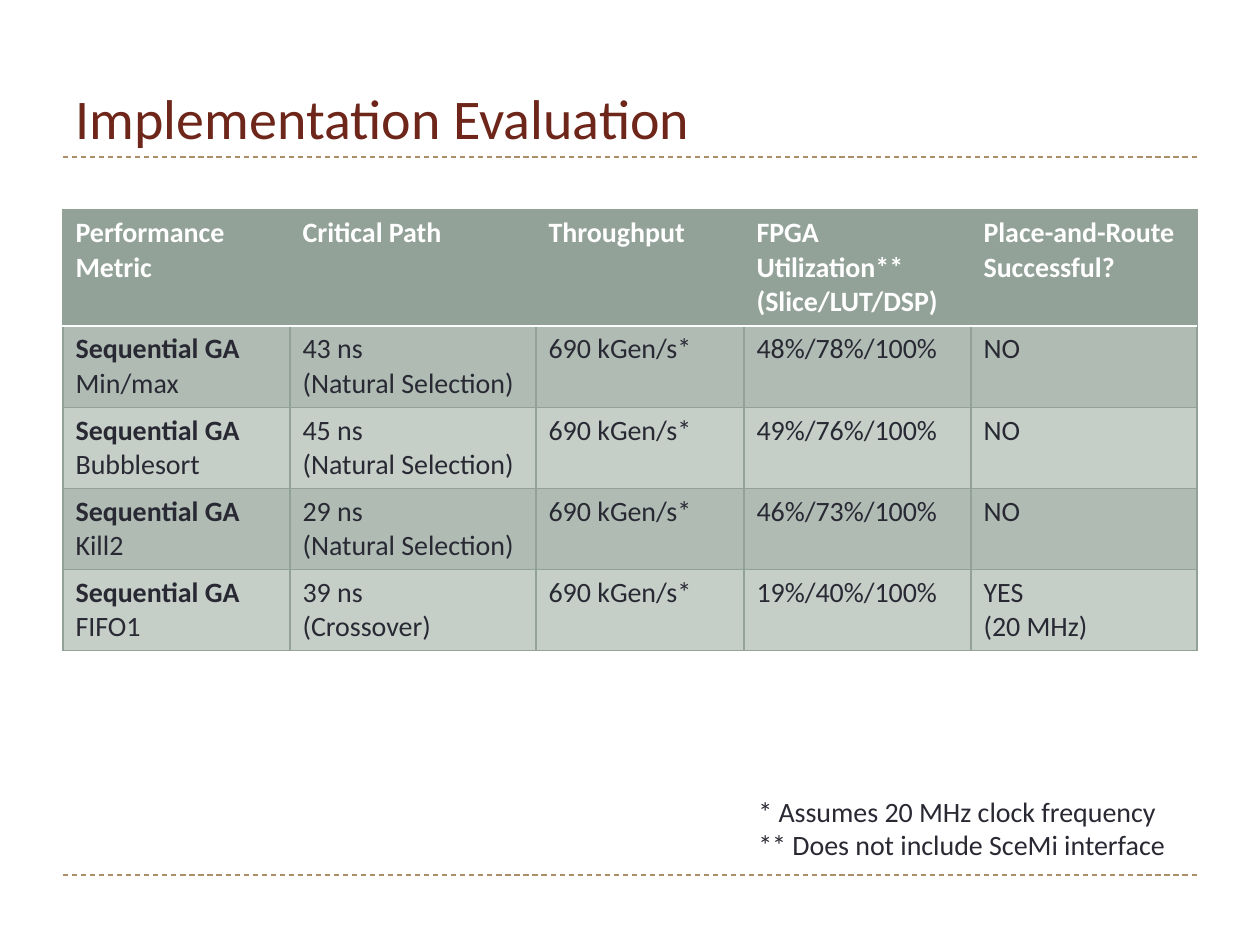
"""Build the Implementation Evaluation slide with its results table."""
from lxml.etree import SubElement
from pptx import Presentation
from pptx.dml.color import RGBColor
from pptx.enum.dml import MSO_LINE
from pptx.enum.shapes import MSO_CONNECTOR
from pptx.enum.text import MSO_ANCHOR, PP_ALIGN
from pptx.oxml.ns import qn
from pptx.util import Emu, Pt

TITLE = "Implementation Evaluation"
HEADER = [
    ["Performance Metric"],
    ["Critical Path"],
    ["Throughput"],
    ["FPGA Utilization**", "(Slice/LUT/DSP)"],
    ["Place-and-Route Successful?"],
]
ROWS = [
    [["Sequential GA", "Min/max"], ["43 ns", "(Natural Selection)"],
     ["690 kGen/s*"], ["48%/78%/100%"], ["NO"]],
    [["Sequential GA", "Bubblesort"], ["45 ns", "(Natural Selection)"],
     ["690 kGen/s*"], ["49%/76%/100%"], ["NO"]],
    [["Sequential GA", "Kill2"], ["29 ns", "(Natural Selection)"],
     ["690 kGen/s*"], ["46%/73%/100%"], ["NO"]],
    [["Sequential GA", "FIFO1"], ["39 ns", "(Crossover)"],
     ["690 kGen/s*"], ["19%/40%/100%"], ["YES", "(20 MHz)"]],
]
NOTES = ["* Assumes 20 MHz clock frequency", "** Does not include SceMi interface"]

FONT = "Calibri"
INK, WHITE, RUST, TAN, SAGE = "292934", "FFFFFF", "6D2619", "AD8F67", "93A299"
BANDS = ["AFBBB3", "C5CEC7"]
LEFT, WIDTH = 63, 1134
COLS = [227, 246, 208, 227, 226]
HEIGHTS = [116] + [81] * len(ROWS)
RULES = [157, 875]


def px(n):
    return Emu(round(n * 914400 / 126))


def rgb(value):
    return RGBColor.from_string(value)


def write(tf, lines, size, color, bolds):
    for i, (line, bold) in enumerate(zip(lines, bolds)):
        p = tf.paragraphs[0] if i == 0 else tf.add_paragraph()
        p.alignment = PP_ALIGN.LEFT
        r = p.add_run()
        r.text = line
        r.font.name, r.font.size, r.font.bold = FONT, Pt(size), bold
        r.font.color.rgb = rgb(color)


def add_rule(slide, y):
    line = slide.shapes.add_connector(
        MSO_CONNECTOR.STRAIGHT, px(LEFT), px(y), px(LEFT + WIDTH), px(y))
    line.line.color.rgb = rgb(TAN)
    line.line.width = Pt(0.75)
    line.line.dash_style = MSO_LINE.DASH
    SubElement(line._element.spPr, qn("a:effectLst"))


def set_border(cell, side, color, width):
    ln = SubElement(cell._tc.get_or_add_tcPr(), qn(f"a:ln{side}"), w=str(Pt(width)))
    SubElement(SubElement(ln, qn("a:solidFill")), qn("a:srgbClr"), val=color)


def add_results(slide):
    table = slide.shapes.add_table(
        len(HEIGHTS), len(COLS), px(LEFT), px(210), px(WIDTH), px(sum(HEIGHTS))).table
    for col, width in zip(table.columns, COLS):
        col.width = px(width)
    for i, (row, height, texts) in enumerate(zip(table.rows, HEIGHTS, [HEADER] + ROWS)):
        row.height = px(height)
        head = i == 0
        for j, (cell, lines) in enumerate(zip(row.cells, texts)):
            bolds = [head or (j == 0 and k == 0) for k in range(len(lines))]
            write(cell.text_frame, lines, 16, WHITE if head else INK, bolds)
            for side in "LRTB":
                divider = (i, side) in [(0, "B"), (1, "T")]
                set_border(cell, side, *((WHITE, 1.5) if divider else (SAGE, 0.75)))
            cell.fill.solid()
            cell.fill.fore_color.rgb = rgb(SAGE if head else BANDS[(i - 1) % 2])


def main():
    prs = Presentation()
    prs.slide_width, prs.slide_height = px(1260), px(945)
    slide = prs.slides.add_slide(prs.slide_layouts[5])
    for y in RULES:
        add_rule(slide, y)

    title = slide.shapes.title
    title.left, title.top, title.width, title.height = px(LEFT), px(21), px(WIDTH), px(136)
    title.text_frame.vertical_anchor = MSO_ANCHOR.BOTTOM
    write(title.text_frame, [TITLE], 32, RUST, [False])

    add_results(slide)

    notes = slide.shapes.add_textbox(px(746), px(788), px(451), px(81))
    notes.text_frame.word_wrap = True
    write(notes.text_frame, NOTES, 16, INK, [False] * len(NOTES))
    prs.save("out.pptx")


if __name__ == "__main__":
    main()
